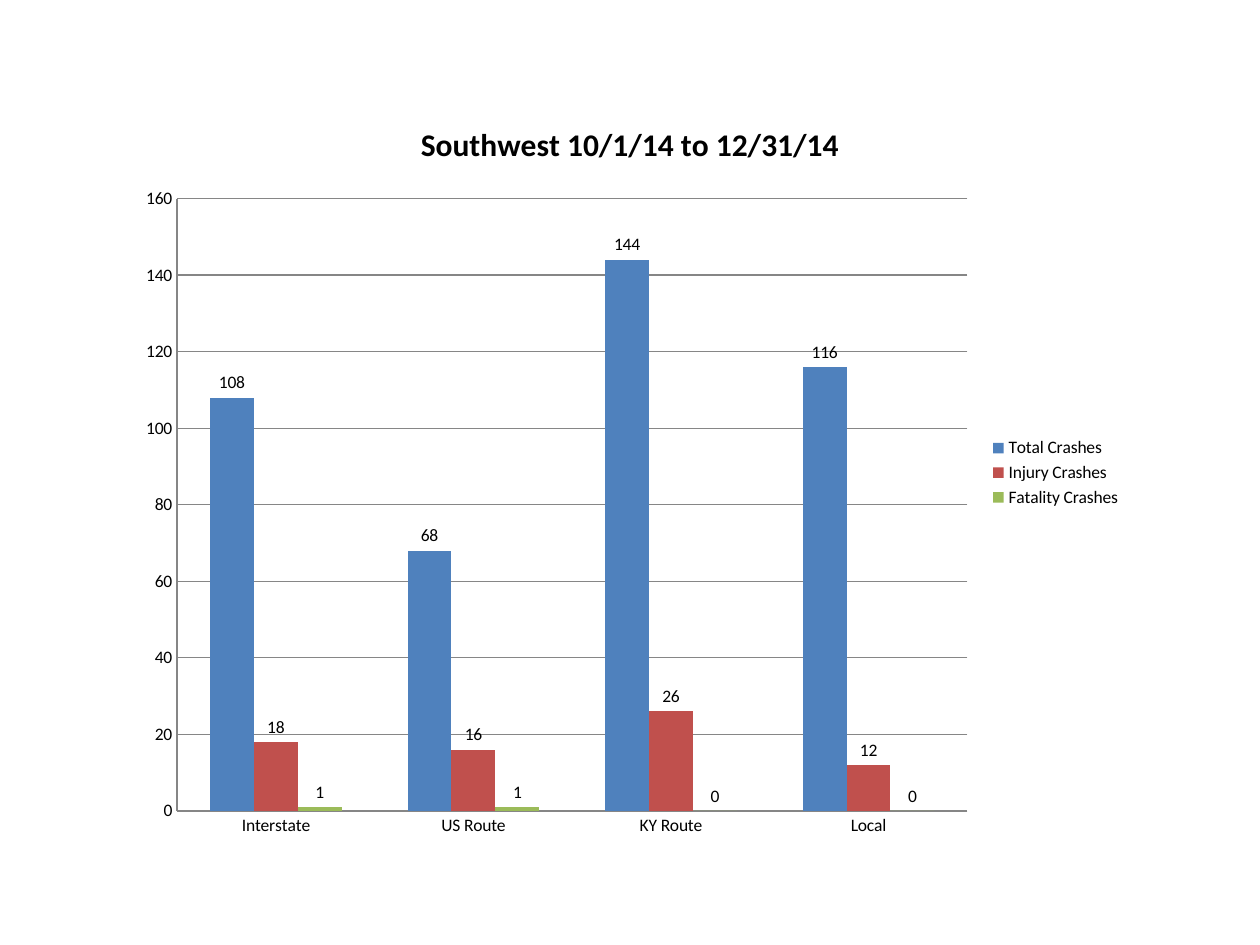
from pptx import Presentation
from pptx.chart.data import CategoryChartData
from pptx.dml.color import RGBColor
from pptx.enum.chart import XL_CHART_TYPE, XL_LABEL_POSITION, XL_LEGEND_POSITION, XL_TICK_MARK
from pptx.util import Cm, Pt

FONT = "Calibri"
BLACK = "000000"
GRAY = "868686"
TITLE = "Southwest 10/1/14 to 12/31/14"
ROAD_TYPES = ["Interstate", "US Route", "KY Route", "Local"]
CRASHES = [
    ("Total Crashes", (108, 68, 144, 116), "4F81BD"),
    ("Injury Crashes", (18, 16, 26, 12), "C0504D"),
    ("Fatality Crashes", (1, 1, 0, 0), "9BBB59"),
]


def color(hex_string):
    return RGBColor.from_string(hex_string)


def style_font(font, size, bold=False):
    font.name = FONT
    font.size = Pt(size)
    font.bold = bold
    font.color.rgb = color(BLACK)


def style_line(line):
    line.color.rgb = color(GRAY)
    line.width = Pt(0.75)


def add_crash_chart(slide):
    data = CategoryChartData()
    data.categories = ROAD_TYPES
    for name, values, _ in CRASHES:
        data.add_series(name, values)
    chart = slide.shapes.add_chart(
        XL_CHART_TYPE.COLUMN_CLUSTERED, Cm(2.54), Cm(1.91), Cm(20.32), Cm(15.24), data
    ).chart
    style_font(chart.font, 10)
    return chart


def style_title(chart):
    chart.has_title = True
    chart.chart_title.include_in_layout = False
    para = chart.chart_title.text_frame.paragraphs[0]
    para.text = TITLE
    style_font(para.runs[0].font, 18, bold=True)


def style_legend(chart):
    chart.has_legend = True
    chart.legend.position = XL_LEGEND_POSITION.RIGHT
    chart.legend.include_in_layout = False


def style_axes(chart):
    for axis in (chart.category_axis, chart.value_axis):
        axis.major_tick_mark = XL_TICK_MARK.NONE
        axis.minor_tick_mark = XL_TICK_MARK.NONE
        style_line(axis.format.line)
    chart.value_axis.has_major_gridlines = True
    style_line(chart.value_axis.major_gridlines.format.line)
    chart.value_axis.minimum_scale = 0
    chart.value_axis.maximum_scale = 160
    chart.value_axis.major_unit = 20


def style_columns(chart):
    plot = chart.plots[0]
    plot.gap_width = 150
    plot.overlap = 0
    plot.vary_by_categories = False
    for series, (_, _, fill_color) in zip(plot.series, CRASHES):
        series.format.fill.solid()
        series.format.fill.fore_color.rgb = color(fill_color)
        labels = series.data_labels
        labels.show_value = True
        labels.position = XL_LABEL_POSITION.OUTSIDE_END
        style_font(labels.font, 10)


def main():
    deck = Presentation()
    deck.slide_width, deck.slide_height = Cm(25.4), Cm(19.05)
    slide = deck.slides.add_slide(deck.slide_layouts[6])
    chart = add_crash_chart(slide)
    style_title(chart)
    style_legend(chart)
    style_axes(chart)
    style_columns(chart)
    deck.save("out.pptx")


if __name__ == "__main__":
    main()
